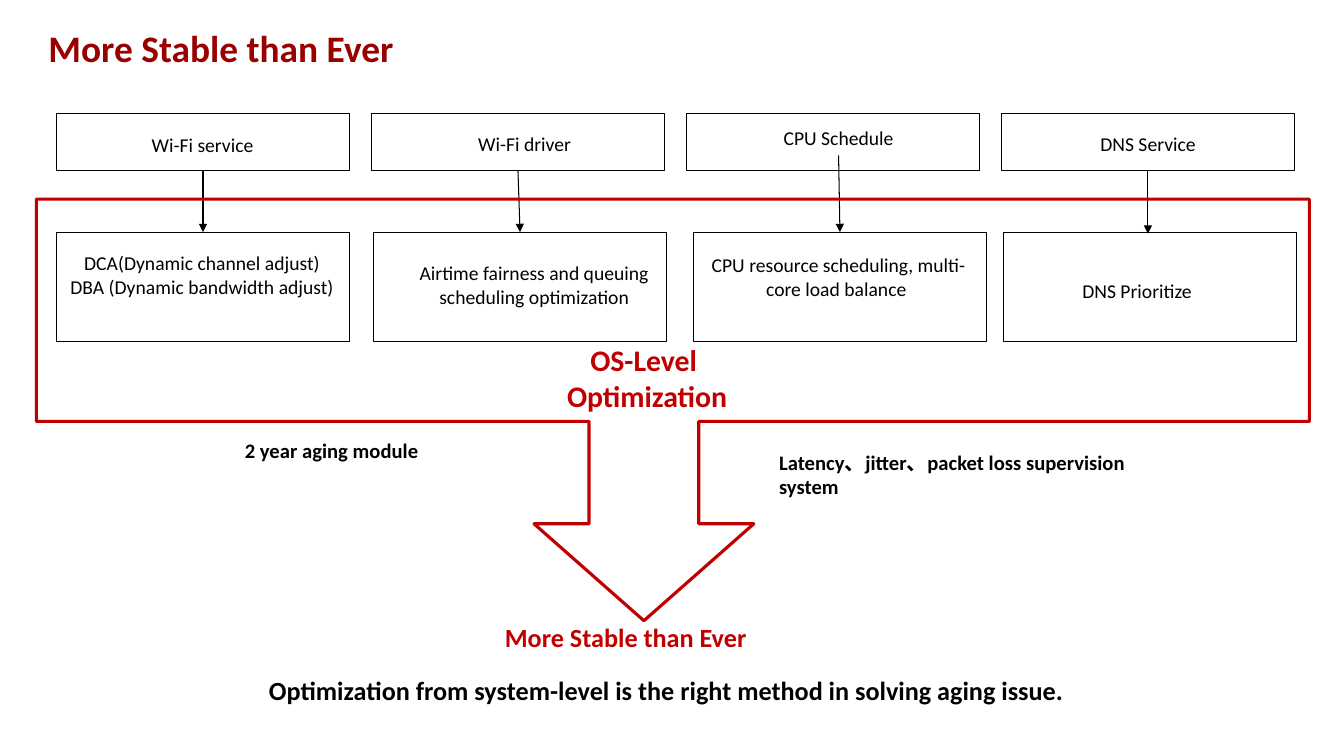
from lxml import etree
from pptx import Presentation
from pptx.dml.color import RGBColor
from pptx.enum.shapes import MSO_CONNECTOR, MSO_SHAPE
from pptx.enum.text import MSO_ANCHOR, MSO_AUTO_SIZE, PP_ALIGN
from pptx.oxml.ns import qn
from pptx.util import Pt

RECT = MSO_SHAPE.RECTANGLE
STRAIGHT = MSO_CONNECTOR.STRAIGHT
LEFT, CENTER = PP_ALIGN.LEFT, PP_ALIGN.CENTER
TOP_SIDE, BOTTOM_SIDE = 0, 2
COLORS = {"black": "000000", "title": "990000", "accent": "C00000"}
FONT = "Calibri"

TITLE = "More Stable than Ever"
AREAS = [
    {"name": "Wi-Fi service", "name_at": (49.7, 91.4, 190),
     "measure": ["DCA(Dynamic channel adjust)", "DBA (Dynamic bandwidth adjust)"],
     "measure_at": (36.7, 175.7, 215.3), "measure_left": 40.5},
    {"name": "Wi-Fi driver", "name_at": (288, 90.7, 173.5),
     "measure": ["Airtime fairness and queuing scheduling optimization"],
     "measure_at": (281.5, 182.9, 200.2), "measure_left": 267},
    {"name": "CPU Schedule", "name_at": (501.1, 86.4, 195.8),
     "measure": ["CPU resource scheduling, multi-core load balance "],
     "measure_at": (493.2, 177.1, 211.7), "measure_left": 495.5,
     "arrow_start": (599, 111)},
    {"name": "DNS Service", "name_at": (733.7, 90.7, 172.8),
     "measure": ["DNS Prioritize"], "measure_spacing": 1.5,
     "measure_at": (725.8, 187.2, 172.8), "measure_left": 717,
     "arrow_end": (820, 167)},
]
CAPTIONS = [
    (["OS-Level ", "Optimization"], (396.7, 240.5, 131), 21.3, "accent", CENTER),
    (["More Stable than Ever"], (353.5, 440.6, 188.6), 18.7, "accent", LEFT),
    (["2 year aging module"], (167.8, 309.6, 139), 14.7, "black", LEFT),
    (["Latency、jitter、packet loss supervision system"],
     (549.4, 317.5, 304), 14.7, "black", LEFT),
    (["Optimization from system-level is the right method in solving aging issue."],
     (97.2, 478, 757.4), 18.7, "black", CENTER),
]

BOX_LEFT, BOX_STEP, BOX_WIDTH = 40.5, 225, 209
NAME_TOP, NAME_HEIGHT = 81.2, 40.8
MEASURE_TOP, MEASURE_HEIGHT = 165.8, 78.5
CALLOUT_LEFT, CALLOUT_RIGHT = 26, 935.3
CALLOUT_TOP, CALLOUT_BOTTOM = 142.3, 301
ARROW_X, STEM_HALF, HEAD_HALF = 460, 39.2, 78.5
HEAD_TOP, TIP = 374.2, 443.4

prs = Presentation()
prs.slide_width, prs.slide_height = Pt(960), Pt(540)
slide = prs.slides.add_slide(prs.slide_layouts[5])
shapes = slide.shapes


def color(key):
    return RGBColor.from_string(COLORS[key])


def write(frame, lines, size, ink, align, bold, spacing=None):
    frame.word_wrap = True
    frame.auto_size = MSO_AUTO_SIZE.NONE
    frame.vertical_anchor = MSO_ANCHOR.TOP
    frame.text = "\n".join(lines)
    for paragraph in frame.paragraphs:
        paragraph.alignment = align
        if spacing:
            paragraph.line_spacing = spacing
        font = paragraph.font
        font.name, font.size, font.bold = FONT, Pt(size), bold
        font.color.rgb = color(ink)


def add_text(lines, place, size, ink, align, bold=True, spacing=None):
    left, top, width = place
    height = 7.2 + len(lines) * size * 1.22
    box = shapes.add_textbox(Pt(left), Pt(top), Pt(width), Pt(height))
    write(box.text_frame, lines, size, ink, align, bold, spacing)


def outline(shape, ink, width):
    shape.shadow.inherit = False
    shape.fill.background()
    shape.line.color.rgb = color(ink)
    shape.line.width = Pt(width)


def add_box(left, top, height):
    box = shapes.add_shape(RECT, Pt(left), Pt(top), Pt(BOX_WIDTH), Pt(height))
    outline(box, "black", 0.75)
    return box


def add_arrow(name_box, measure_box, start, end):
    x1, y1 = start or (0, 0)
    x2, y2 = end or (0, 0)
    arrow = shapes.add_connector(STRAIGHT, Pt(x1), Pt(y1), Pt(x2), Pt(y2))
    if not start:
        arrow.begin_connect(name_box, BOTTOM_SIDE)
    if not end:
        arrow.end_connect(measure_box, TOP_SIDE)
    arrow.line.color.rgb = color("black")
    arrow.line.width = Pt(0.75)
    etree.SubElement(arrow.line._get_or_add_ln(), qn("a:tailEnd"), type="triangle")
    etree.SubElement(arrow._element.spPr, qn("a:effectLst"))


title = shapes.title
title.left, title.top, title.width, title.height = Pt(27.4), Pt(14.4), Pt(565), Pt(39.6)
write(title.text_frame, [TITLE], 26.7, "title", LEFT, True)

for i, area in enumerate(AREAS):
    name_box = add_box(BOX_LEFT + i * BOX_STEP, NAME_TOP, NAME_HEIGHT)
    measure_box = add_box(area["measure_left"], MEASURE_TOP, MEASURE_HEIGHT)
    add_text([area["name"]], area["name_at"], 14, "black", CENTER, False)
    add_text(area["measure"], area["measure_at"], 14, "black", CENTER, False,
             area.get("measure_spacing"))
    add_arrow(name_box, measure_box, area.get("arrow_start"), area.get("arrow_end"))

callout_points = [
    (CALLOUT_RIGHT, CALLOUT_TOP), (CALLOUT_RIGHT, CALLOUT_BOTTOM),
    (ARROW_X + STEM_HALF, CALLOUT_BOTTOM), (ARROW_X + STEM_HALF, HEAD_TOP),
    (ARROW_X + HEAD_HALF, HEAD_TOP), (ARROW_X, TIP), (ARROW_X - HEAD_HALF, HEAD_TOP),
    (ARROW_X - STEM_HALF, HEAD_TOP), (ARROW_X - STEM_HALF, CALLOUT_BOTTOM),
    (CALLOUT_LEFT, CALLOUT_BOTTOM),
]
builder = shapes.build_freeform(Pt(CALLOUT_LEFT), Pt(CALLOUT_TOP))
builder.add_line_segments([(Pt(x), Pt(y)) for x, y in callout_points], close=True)
outline(builder.convert_to_shape(), "accent", 2.25)

for caption in CAPTIONS:
    add_text(*caption)

prs.save("out.pptx")
